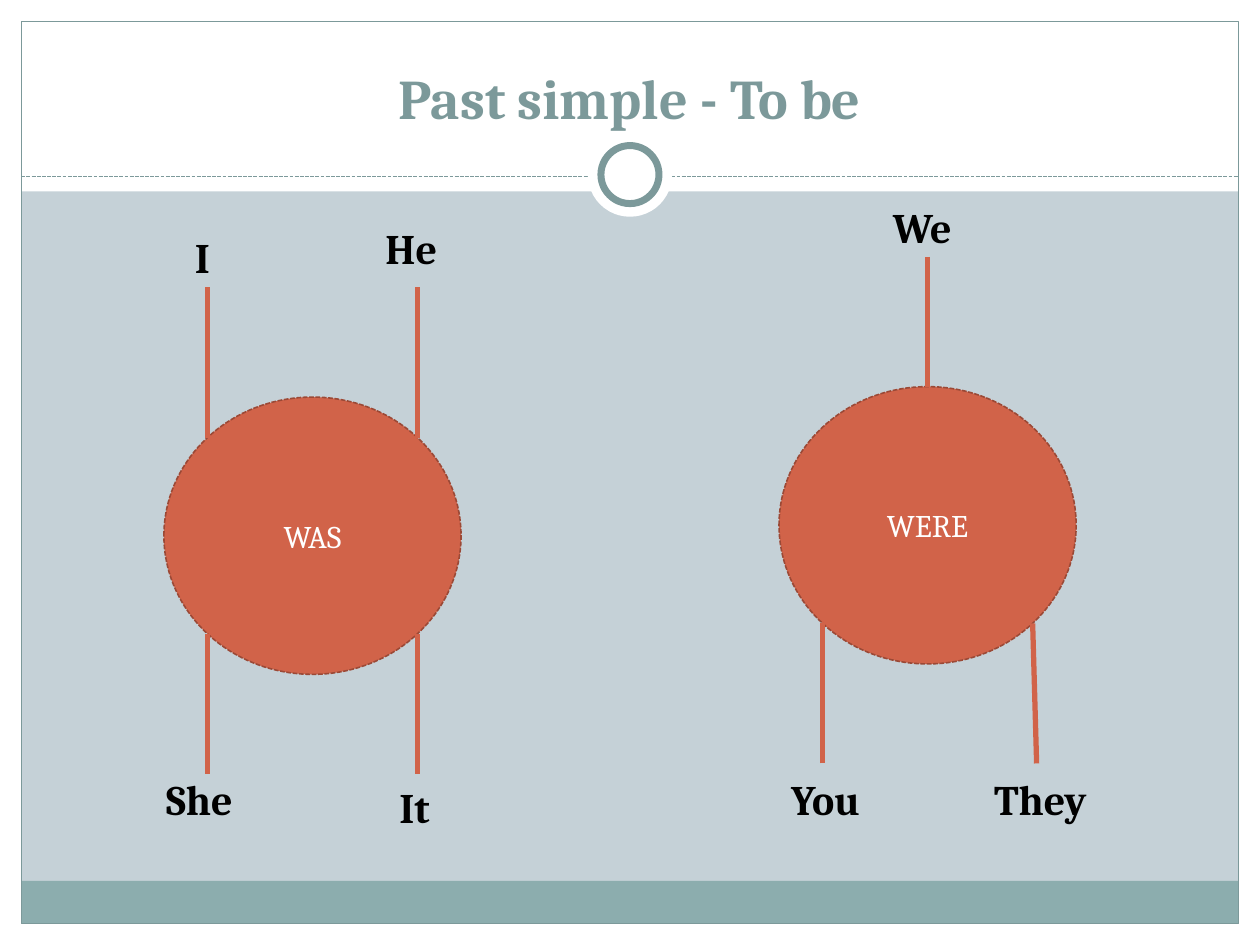
from math import cos, radians, sin
from lxml import etree
from pptx import Presentation
from pptx.dml.color import RGBColor
from pptx.enum import dml, shapes, text
from pptx.oxml.ns import qn
from pptx.util import Cm, Pt

THEME = {
    "font": "Cambria",
    "back": "C5D1D7", "white": "FFFFFF", "black": "000000",
    "teal": "7C999A", "foot": "8CADAE", "red": "D16349", "rim": "9B4936",
    "title": 32, "verb": 18, "word": 24,
}
WIDE, HIGH, EDGE = 25.4, 19.05, 0.43
HEAD, FOOT, RULE = 3.86, 0.86, 3.56
RING = 3.52
OVAL = (5.99, 5.59)
TITLE = "Past simple - To be"
VERBS = [
    {"verb": "WAS", "mid": (6.3, 10.8), "words": [
        ("He", (7.52, 4.37, 1.8), -45, 5.79, 0),
        ("I", (3.68, 4.55, 0.99), -135, 5.79, 0),
        ("It", (7.8, 15.62, 1.24), 45, 15.6, 0),
        ("She", (3.1, 15.47, 2.13), 135, 15.6, 0)]},
    {"verb": "WERE", "mid": (18.7, 10.59), "words": [
        ("We", (17.75, 3.94, 2.06), -90, 5.18, 0),
        ("You", (15.7, 15.47, 2.26), 135, 15.39, 0),
        ("They", (19.79, 15.47, 2.64), 45, 15.39, 0.08)]},
]

deck = Presentation()
deck.slide_width, deck.slide_height = Cm(WIDE), Cm(HIGH)
slide = deck.slides.add_slide(deck.slide_layouts[6])


def tint(name):
    return RGBColor.from_string(THEME[name])


def paint(fill, name):
    fill.solid()
    fill.fore_color.rgb = tint(name)


def stroke(line, name, size, dash=False):
    paint(line.fill, name)
    line.width = Pt(size)
    if dash:
        line.dash_style = dml.MSO_LINE.SQUARE_DOT


def shape(kind, box, fill=None, line=None):
    item = slide.shapes.add_shape(kind, *map(Cm, box))
    item.shadow.inherit = False
    if fill:
        paint(item.fill, fill)
    else:
        item.fill.background()
    if line:
        stroke(item.line, *line)
    else:
        item.line.fill.background()
    return item


def oval(mid, size, fill, line=None):
    box = (mid[0] - size[0] / 2, mid[1] - size[1] / 2, *size)
    return shape(shapes.MSO_SHAPE.OVAL, box, fill, line)


def link(start, end, *line):
    item = slide.shapes.add_connector(
        shapes.MSO_CONNECTOR.STRAIGHT, *map(Cm, (*start, *end)))
    stroke(item.line, *line)
    etree.SubElement(item._element.spPr, qn("a:effectLst"))


def write(item, words, size, color, bold=False, align="CENTER", anchor="MIDDLE"):
    frame = item.text_frame
    frame.text = words
    frame.vertical_anchor = getattr(text.MSO_ANCHOR, anchor)
    para = frame.paragraphs[0]
    para.alignment = getattr(text.PP_ALIGN, align)
    font = para.runs[0].font
    font.name, font.size, font.bold = THEME["font"], Pt(THEME[size]), bold
    font.color.rgb = tint(color)


def label(box, words, *style, wrap=False):
    item = slide.shapes.add_textbox(*map(Cm, box))
    item.text_frame.word_wrap = wrap
    write(item, words, *style)


def frame():
    paint(slide.background.fill, "back")
    rect = shapes.MSO_SHAPE.RECTANGLE
    wide = WIDE - 2 * EDGE
    for box in [(0, HIGH - EDGE, WIDE, EDGE), (0, 0, WIDE, HEAD),
                (0, 0, EDGE, HIGH), (WIDE - EDGE, 0, EDGE, HIGH)]:
        shape(rect, box, "white")
    shape(rect, (EDGE, HIGH - EDGE - FOOT, wide, FOOT), "foot")
    shape(rect, (EDGE, EDGE, wide, HIGH - 2 * EDGE), None, ("teal", 0.75))
    link((EDGE, RULE), (WIDE - EDGE, RULE), "teal", 0.75, True)
    oval((WIDE / 2, RING), (1.7, 1.7), "white")
    oval((WIDE / 2, RING), (1.17, 1.17), "white", ("teal", 4))
    label((0.85, 0.64, WIDE - 1.7, 2.12), TITLE,
          "title", "teal", True, "CENTER", "BOTTOM", wrap=True)


def wheel(verb, mid, words):
    hub = oval(mid, OVAL, "red", ("rim", 0.9, True))
    write(hub, verb, "verb", "white")
    for word, (left, top, width), turn, tip, lean in words:
        x = mid[0] + OVAL[0] / 2 * cos(radians(turn))
        y = mid[1] + OVAL[1] / 2 * sin(radians(turn))
        link((x + lean, tip), (x, y), "red", 3)
        label((left, top, width, 1.27), word,
              "word", "black", True, "LEFT", "TOP")


frame()
for part in VERBS:
    wheel(**part)
deck.save("out.pptx")
